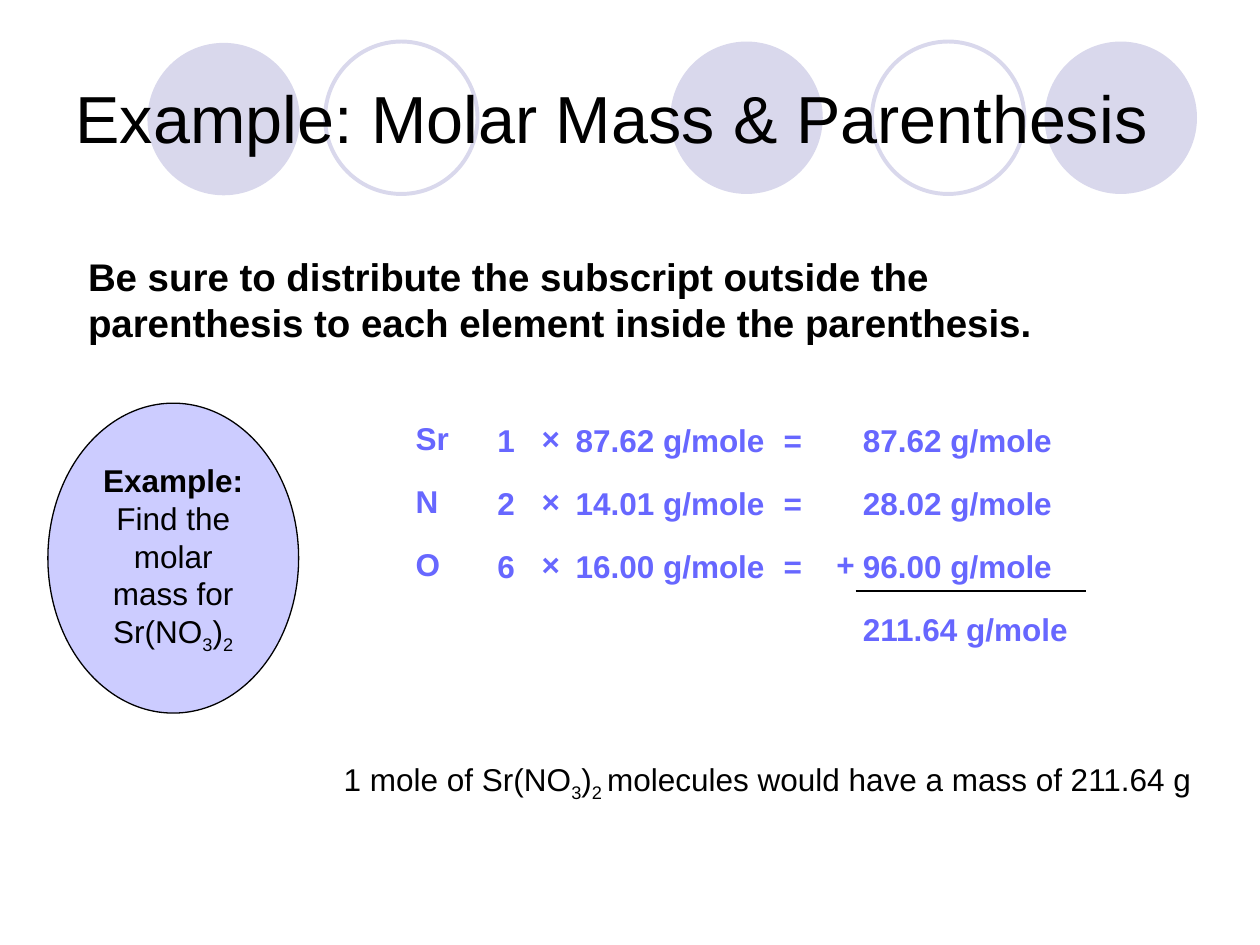
from dataclasses import dataclass
from typing import Optional

from lxml.etree import SubElement
from pptx import Presentation
from pptx.dml.color import RGBColor
from pptx.enum.shapes import MSO_CONNECTOR, MSO_SHAPE
from pptx.enum.text import MSO_ANCHOR, MSO_AUTO_SIZE, PP_ALIGN
from pptx.oxml.ns import qn
from pptx.util import Inches, Pt


@dataclass(frozen=True)
class Theme:
    font: str = "Arial"
    ink: RGBColor = RGBColor(0x00, 0x00, 0x00)
    accent: RGBColor = RGBColor(0x67, 0x67, 0xFF)
    bubble: RGBColor = RGBColor(0xCC, 0xCC, 0xFF)
    ornament: RGBColor = RGBColor(0xD9, 0xD8, 0xEC)
    title_size: int = 38
    rule_size: int = 22
    body_size: int = 18


@dataclass(frozen=True)
class Ring:
    left: float
    top: float
    filled: bool


@dataclass(frozen=True)
class ElementRow:
    symbol: str
    symbol_width: float
    count: str
    molar_mass: str
    subtotal: str


@dataclass(frozen=True)
class Column:
    left: float
    width: float
    lift: float = 0.0


THEME = Theme()
RING_SIZE = 1.21
RINGS = [
    Ring(5.32, 0.33, True),
    Ring(8.29, 0.33, True),
    Ring(1.17, 0.34, True),
    Ring(6.92, 0.33, False),
    Ring(2.58, 0.33, False),
]
ROWS = [
    ElementRow("Sr", 0.47, "1", "87.62 g/mole", "87.62 g/mole"),
    ElementRow("N", 0.38, "2", "14.01 g/mole", "28.02 g/mole"),
    ElementRow("O", 0.40, "6", "16.00 g/mole", "96.00 g/mole"),
]
ROW_TOP, ROW_STEP, ROW_HEIGHT = 3.29, 0.5, 0.4
SYMBOL_LEFT = 3.2
COUNT = Column(3.85, 0.34)
TIMES = Column(4.2, 0.34, 0.01)
MOLAR_MASS = Column(4.47, 1.7)
EQUALS = Column(6.12, 0.35)
PLUS = Column(6.54, 0.35, 0.01)
SUBTOTAL = Column(6.75, 1.7)
TOTAL = Column(6.75, 1.84)


def style_run(run, size: int, color: RGBColor = THEME.ink, bold: bool = False) -> None:
    run.font.name = THEME.font
    run.font.size = Pt(size)
    run.font.color.rgb = color
    run.font.bold = bold


def add_formula_runs(paragraph, pieces: list[str], size: int) -> None:
    """Add the pieces as runs, setting every second one as a subscript."""
    for index, piece in enumerate(pieces):
        run = paragraph.add_run()
        run.text = piece
        style_run(run, size)
        if index % 2:
            run.font._element.set("baseline", "-25000")


def add_ellipse(slide, left: float, top: float, width: float, height: float,
                fill: Optional[RGBColor], line: Optional[RGBColor], weight: float):
    ellipse = slide.shapes.add_shape(
        MSO_SHAPE.OVAL, Inches(left), Inches(top), Inches(width), Inches(height))
    ellipse.shadow.inherit = False
    if fill is None:
        ellipse.fill.background()
    else:
        ellipse.fill.solid()
        ellipse.fill.fore_color.rgb = fill
    if line is None:
        ellipse.line.fill.background()
    else:
        ellipse.line.color.rgb = line
        ellipse.line.width = Pt(weight)
    return ellipse


def add_text_frame(slide, left: float, top: float, width: float, height: float,
                   wrap: bool = True):
    frame = slide.shapes.add_textbox(
        Inches(left), Inches(top), Inches(width), Inches(height)).text_frame
    frame.word_wrap = wrap
    frame.auto_size = MSO_AUTO_SIZE.SHAPE_TO_FIT_TEXT
    return frame


def add_entry(slide, text: str, column: Column, row: int) -> None:
    top = ROW_TOP + row * ROW_STEP - column.lift
    frame = add_text_frame(slide, column.left, top, column.width, ROW_HEIGHT, wrap=False)
    frame.text = text
    style_run(frame.paragraphs[0].runs[0], THEME.body_size, THEME.accent, bold=True)


def add_header(slide) -> None:
    for ring in RINGS:
        add_ellipse(slide, ring.left, ring.top, RING_SIZE, RING_SIZE,
                    THEME.ornament if ring.filled else None,
                    None if ring.filled else THEME.ornament, 2.25)
    title = slide.shapes.title
    slide.shapes._spTree.append(title._element)  # bring the title in front of the rings
    title.left, title.top = Inches(0.5), Inches(0.3)
    title.width, title.height = Inches(9), Inches(1.25)
    title.text_frame.text = "Example: Molar Mass & Parenthesis"
    title.text_frame.vertical_anchor = MSO_ANCHOR.MIDDLE
    heading = title.text_frame.paragraphs[0]
    heading.alignment = PP_ALIGN.LEFT
    style_run(heading.runs[0], THEME.title_size)


def add_rule(slide) -> None:
    frame = add_text_frame(slide, 0.6, 1.96, 8.52, 0.83)
    frame.text = ("Be sure to distribute the subscript outside the "
                  "parenthesis to each element inside the parenthesis.")
    style_run(frame.paragraphs[0].runs[0], THEME.rule_size, bold=True)


def add_calculation(slide) -> None:
    for index, row in enumerate(ROWS):
        add_entry(slide, row.symbol, Column(SYMBOL_LEFT, row.symbol_width, 0.01), index)
        add_entry(slide, row.count, COUNT, index)
        add_entry(slide, "×", TIMES, index)
        add_entry(slide, row.molar_mass, MOLAR_MASS, index)
        add_entry(slide, "=", EQUALS, index)
        add_entry(slide, row.subtotal, SUBTOTAL, index)
    add_entry(slide, "+", PLUS, len(ROWS) - 1)
    add_entry(slide, "211.64 g/mole", TOTAL, len(ROWS))

    sum_line = slide.shapes.add_connector(
        MSO_CONNECTOR.STRAIGHT, Inches(6.79), Inches(4.69), Inches(8.62), Inches(4.69))
    sum_line.line.color.rgb = THEME.ink
    sum_line.line.width = Pt(1)
    SubElement(sum_line._element.spPr, qn("a:effectLst"))


def add_task(slide) -> None:
    bubble = add_ellipse(slide, 0.38, 3.2, 1.99, 2.46, THEME.bubble, THEME.ink, 0.75)
    frame = bubble.text_frame
    frame.word_wrap = True
    frame.vertical_anchor = MSO_ANCHOR.MIDDLE
    frame.text = "Example:"
    label = frame.paragraphs[0]
    style_run(label.runs[0], THEME.body_size, bold=True)
    task = frame.add_paragraph()
    add_formula_runs(task, ["Find the molar mass for Sr(NO", "3", ")", "2"],
                     THEME.body_size)
    for paragraph in (label, task):
        paragraph.alignment = PP_ALIGN.CENTER


def add_conclusion(slide) -> None:
    frame = add_text_frame(slide, 2.63, 5.98, 7.03, 0.4)
    add_formula_runs(
        frame.paragraphs[0],
        ["1 mole of Sr(NO", "3", ")", "2 ", "molecules would have a mass of 211.64 g"],
        THEME.body_size)


def main() -> None:
    presentation = Presentation()
    presentation.slide_width, presentation.slide_height = Inches(10), Inches(7.5)
    slide = presentation.slides.add_slide(presentation.slide_layouts[5])
    add_header(slide)
    add_rule(slide)
    add_calculation(slide)
    add_conclusion(slide)
    add_task(slide)
    presentation.save("out.pptx")


if __name__ == "__main__":
    main()
